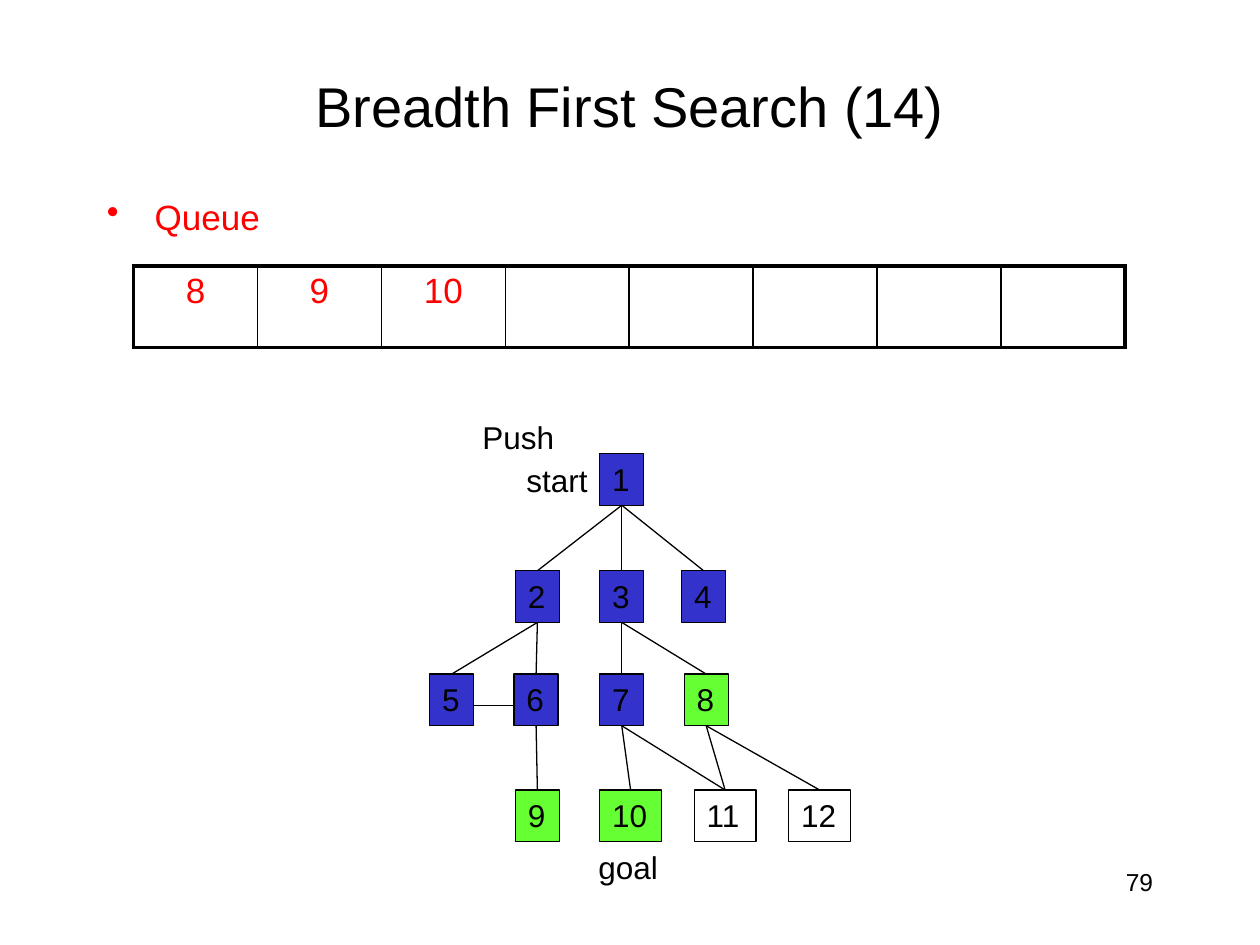
from lxml import etree
from pptx import Presentation
from pptx.dml.color import RGBColor
from pptx.enum.shapes import MSO_CONNECTOR, MSO_SHAPE
from pptx.enum.text import MSO_ANCHOR, PP_ALIGN
from pptx.oxml.ns import qn
from pptx.util import Inches, Pt

RECTANGLE = MSO_SHAPE.RECTANGLE
STRAIGHT = MSO_CONNECTOR.STRAIGHT
TOP, MIDDLE = MSO_ANCHOR.TOP, MSO_ANCHOR.MIDDLE
LEFT, CENTER, RIGHT = PP_ALIGN.LEFT, PP_ALIGN.CENTER, PP_ALIGN.RIGHT
TOP_SITE, BOTTOM_SITE = 0, 2

COLORS = {"ink": "000000", "queue": "FF0000", "visited": "3333CC", "queued": "66FF33"}
FONT = "Arial"

LEVEL_TOPS = [3.6, 4.53, 5.35, 6.27]
# label: (level, left, state)
NODES = {
    "1": (0, 4.76, "visited"),
    "2": (1, 4.09, "visited"),
    "3": (1, 4.76, "visited"),
    "4": (1, 5.41, "visited"),
    "5": (2, 3.41, "visited"),
    "6": (2, 4.08, "visited"),
    "7": (2, 4.76, "visited"),
    "8": (2, 5.43, "queued"),
    "9": (3, 4.09, "queued"),
    "10": (3, 4.76, "queued"),
    "11": (3, 5.51, None),
    "12": (3, 6.26, None),
}
CHILDREN = {
    "1": ["2", "3", "4"],
    "2": ["5", "6"],
    "3": ["7", "8"],
    "6": ["9"],
    "7": ["10", "11"],
    "8": ["11", "12"],
}
QUEUE = ["8", "9", "10", "", "", "", "", ""]


def rgb(name):
    return RGBColor.from_string(COLORS[name])


def write(frame, text, size=18, color="ink", align=LEFT, anchor=TOP, wrap=True, bullet=None):
    frame.word_wrap = wrap
    frame.vertical_anchor = anchor
    paragraph = frame.paragraphs[0]
    paragraph.alignment = align
    if bullet:
        properties = paragraph._p.get_or_add_pPr()
        properties.set("marL", str(Inches(0.38)))
        properties.set("indent", str(-Inches(0.38)))
        etree.SubElement(properties, qn("a:buChar")).set("char", bullet)
    run = paragraph.add_run()
    run.text = text
    run.font.name = FONT
    run.font.size = Pt(size)
    run.font.color.rgb = rgb(color)


def set_borders(cell, widths):
    """Draw the cell's sides; widths maps L, R, T, B (in that order) to points."""
    properties = cell._tc.get_or_add_tcPr()
    for index, (side, width) in enumerate(widths.items()):
        border = etree.Element(qn(f"a:ln{side}"), w=str(Pt(width)))
        fill = etree.SubElement(border, qn("a:solidFill"))
        etree.SubElement(fill, qn("a:srgbClr")).set("val", COLORS["ink"])
        properties.insert(index, border)


class SlideBuilder:
    """Holds the current slide and the shared line style."""

    def __init__(self, slide, line_width=0.75):
        self.slide = slide
        self.line_width = Pt(line_width)

    def text(self, left, top, width, height, text, **style):
        box = self.slide.shapes.add_textbox(
            Inches(left), Inches(top), Inches(width), Inches(height))
        write(box.text_frame, text, **style)

    def node(self, label, level, left, state):
        width = 0.35 if len(label) == 1 else 0.49
        shape = self.slide.shapes.add_shape(
            RECTANGLE, Inches(left), Inches(LEVEL_TOPS[level]), Inches(width), Inches(0.41))
        shape.shadow.inherit = False
        if state:
            shape.fill.solid()
            shape.fill.fore_color.rgb = rgb(state)
        else:
            shape.fill.background()
        shape.line.color.rgb = rgb("ink")
        shape.line.width = self.line_width
        write(shape.text_frame, label, wrap=False)
        return shape

    def line(self, start=(0, 0), end=(0, 0)):
        connector = self.slide.shapes.add_connector(
            STRAIGHT, *(Inches(value) for value in (*start, *end)))
        connector.line.color.rgb = rgb("ink")
        connector.line.width = self.line_width
        etree.SubElement(connector._element.spPr, qn("a:effectLst"))
        return connector

    def edge(self, parent, child):
        connector = self.line()
        connector.begin_connect(parent, BOTTOM_SITE)
        connector.end_connect(child, TOP_SITE)

    def queue(self, left, top, width, height, items):
        table = self.slide.shapes.add_table(
            1, len(items), Inches(left), Inches(top), Inches(width), Inches(height)).table
        table.first_row = False
        table.horz_banding = False
        last = len(items) - 1
        for index, item in enumerate(items):
            cell = table.cell(0, index)
            cell.fill.background()
            set_borders(cell, {"L": 2.25 if index == 0 else 1,
                               "R": 2.25 if index == last else 1,
                               "T": 2.25, "B": 2.25})
            if item:
                write(cell.text_frame, item, size=20, color="queue", align=CENTER)


def main():
    deck = Presentation()
    deck.slide_width, deck.slide_height = Inches(10), Inches(7.5)
    builder = SlideBuilder(deck.slides.add_slide(deck.slide_layouts[6]))

    builder.text(7.17, 6.83, 2.08, 0.5, "79", size=14, align=RIGHT)
    builder.text(0.75, 0.42, 8.5, 0.83, "Breadth First Search (14)",
                 size=32, align=CENTER, anchor=MIDDLE)
    builder.text(0.75, 1.5, 8.5, 2.5, "Queue", size=20, color="queue", bullet="•")

    nodes = {label: builder.node(label, *place) for label, place in NODES.items()}
    for parent, children in CHILDREN.items():
        for child in children:
            builder.edge(nodes[parent], nodes[child])
    builder.line((3.76, 5.6), (4.09, 5.6))

    builder.text(4.08, 3.61, 0.69, 0.4, "start", wrap=False)
    builder.text(4.65, 6.68, 0.67, 0.4, "goal", wrap=False)
    builder.queue(1.06, 2.11, 7.87, 0.65, QUEUE)
    builder.text(3.73, 3.27, 0.77, 0.4, "Push", wrap=False)

    deck.save("out.pptx")


if __name__ == "__main__":
    main()
